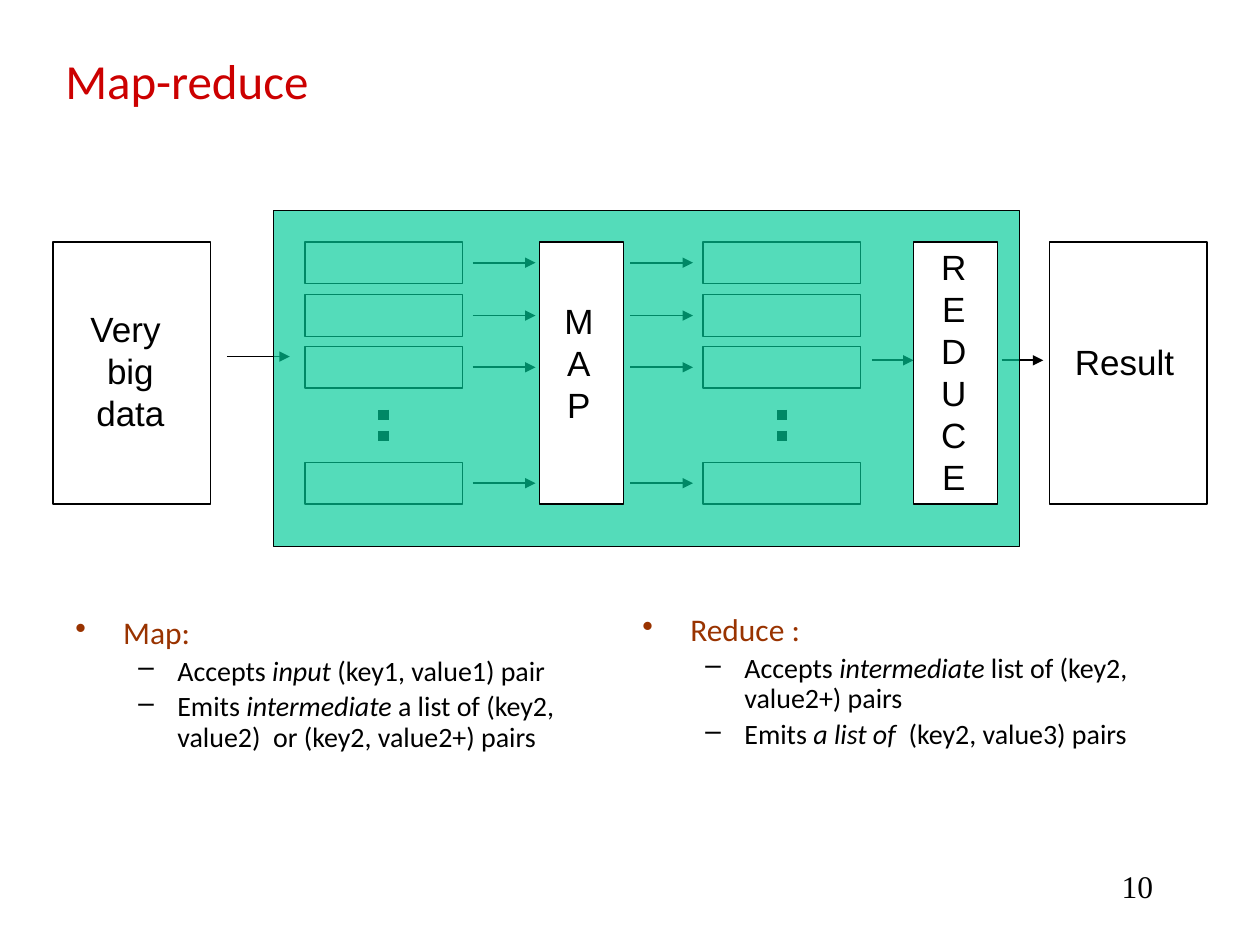
import pptx
import pptx.util
import pptx.dml.color
import pptx.enum.dml
import pptx.enum.shapes
import pptx.enum.text
import pptx.oxml
import pptx.oxml.ns

Inches = pptx.util.Inches
Pt = pptx.util.Pt
ALIGN = pptx.enum.text.PP_ALIGN
ANCHOR = pptx.enum.text.MSO_ANCHOR

BLACK, WHITE, TEAL = "000000", "FFFFFF", "00CC99"
RED, BROWN = "CC0000", "993300"
ROW_OFFSETS = (0, 0.42, 0.83, 1.75)
ROW_W, ROW_H = 1.25, 0.33
STAGE_TOP, STAGE_H = 1.92, 2.08


def rgb(color):
    return pptx.dml.color.RGBColor.from_string(color)


def add_child(parent, tag, **attrs):
    child = pptx.oxml.parse_xml(f"<a:{tag} {pptx.oxml.ns.nsdecls('a')}/>")
    for name, value in attrs.items():
        child.set(name, str(value))
    parent.append(child)
    return child


def add_run(p, text, size=20, font="Arial", color=BLACK, italic=None):
    r = p.add_run()
    r.text = text
    r.font.size = Pt(size)
    r.font.name = font
    r.font.italic = italic
    r.font.color.rgb = rgb(color)


def add_text(slide, box, text, align=ALIGN.LEFT, anchor=ANCHOR.TOP, wrap=True, **font):
    tf = slide.shapes.add_textbox(*map(Inches, box)).text_frame
    tf.word_wrap = wrap
    tf.vertical_anchor = anchor
    for i, line in enumerate(text.split("\n")):
        p = tf.add_paragraph() if i else tf.paragraphs[0]
        p.alignment = align
        add_run(p, line, **font)


def add_rect(slide, box, color=WHITE, opacity=None):
    sp = slide.shapes.add_shape(
        pptx.enum.shapes.MSO_SHAPE.RECTANGLE, *map(Inches, box))
    sp.shadow.inherit = False
    sp.fill.solid()
    sp.fill.fore_color.rgb = rgb(color)
    if opacity is not None:
        fill = sp.fill._xPr.find(pptx.oxml.ns.qn("a:solidFill"))
        add_child(fill[0], "alpha", val=opacity * 1000)
    sp.line.color.rgb = rgb(BLACK)
    sp.line.width = Pt(0.75)


def add_line(slide, start, end, width=1):
    line = slide.shapes.add_connector(
        pptx.enum.shapes.MSO_CONNECTOR.STRAIGHT, *map(Inches, start + end))
    line.line.color.rgb = rgb(BLACK)
    line.line.width = Pt(width)
    add_child(line._element.spPr, "effectLst")
    return line


def add_arrow(slide, x, y, length):
    line = add_line(slide, (x, y), (x + length, y))
    add_child(line.line._get_or_add_ln(), "tailEnd", type="triangle")


def add_records(slide, left, top):
    """Stack of record boxes, with dots for the ones left out."""
    for offset in ROW_OFFSETS:
        add_rect(slide, (left, top + offset, ROW_W, ROW_H))
    x = left + ROW_W / 2
    dots = add_line(slide, (x, top + 1.33), (x, top + 1.58), width=6)
    dots.line.dash_style = pptx.enum.dml.MSO_LINE.ROUND_DOT


def add_row_arrows(slide, left, top):
    for offset in ROW_OFFSETS:
        add_arrow(slide, left, top + offset + ROW_H / 2, 0.5)


def add_stage(slide, left, width, label, label_box):
    """White stage box; label_box is relative to its top left corner."""
    add_rect(slide, (left, STAGE_TOP, width, STAGE_H))
    dx, dy, w, h = label_box
    add_text(slide, (left + dx, STAGE_TOP + dy, w, h), label,
             align=ALIGN.CENTER, wrap=False)


def add_flow(slide):
    for left in (2.42, 5.58):
        add_records(slide, left, STAGE_TOP)
    for left in (3.75, 5):
        add_row_arrows(slide, left, STAGE_TOP)
    for x, y, length in ((1.8, 2.83, 0.5), (6.92, 2.86, 0.33), (7.95, 2.86, 0.33)):
        add_arrow(slide, x, y, length)
    add_rect(slide, (2.17, 1.67, 5.92, 2.67), TEAL, opacity=67)
    add_stage(slide, 0.42, 1.25, "Very \nbig\ndata", (0.19, 0.47, 0.85, 1.1))
    add_stage(slide, 4.28, 0.67, "M\nA\nP", (0.1, 0.41, 0.43, 1.1))
    add_stage(slide, 7.25, 0.67, "R\nE\nD\nU\nC\nE", (0.12, -0.02, 0.4, 2.1))
    add_stage(slide, 8.33, 1.25, "Result", (0.1, 0.73, 0.99, 0.43))


def format_bullet(p, char, left, hanging, size):
    p.line_spacing = 0.9
    p.space_before = Pt(size * 0.2)
    pPr = p._p.get_or_add_pPr()
    pPr.set("marL", str(Inches(left)))
    pPr.set("indent", str(-Inches(hanging)))
    add_child(pPr, "buChar", char=char)


def add_bullets(slide, box, heading, items):
    """Heading bullet with sub-items, each (before, italic part, after)."""
    tf = slide.shapes.add_textbox(*map(Inches, box)).text_frame
    tf.word_wrap = True
    p = tf.paragraphs[0]
    format_bullet(p, "•", 0.38, 0.38, 18)
    add_run(p, heading, size=18, font="Calibri", color=BROWN)
    for parts in items:
        p = tf.add_paragraph()
        p.level = 1
        format_bullet(p, "–", 0.81, 0.31, 16)
        for text, italic in zip(parts, (False, True, False)):
            add_run(p, text, size=16, font="Calibri", italic=italic)


def main():
    prs = pptx.Presentation()
    prs.slide_width, prs.slide_height = Inches(10), Inches(7.5)
    slide = prs.slides.add_slide(prs.slide_layouts[6])
    add_text(slide, (7.17, 6.83, 2.08, 0.5), "10", align=ALIGN.RIGHT,
             size=18, font="Times New Roman")
    add_text(slide, (0.42, 0.42, 9.17, 0.42), "Map-reduce", anchor=ANCHOR.MIDDLE,
             size=28, font="Calibri", color=RED)
    add_bullets(slide, (0.5, 4.85, 4.5, 1.73), "Map:", [
        ("Accepts ", "input", " (key1, value1) pair"),
        ("Emits ", "intermediate",
         " a list of (key2, value2)  or (key2, value2+) pairs"),
    ])
    add_bullets(slide, (5, 4.83, 4.58, 1.5), "Reduce :", [
        ("Accepts ", "intermediate", " list of (key2, value2+) pairs"),
        ("Emits ", "a list of ", " (key2, value3) pairs"),
    ])
    add_flow(slide)
    prs.save("out.pptx")


if __name__ == "__main__":
    main()
